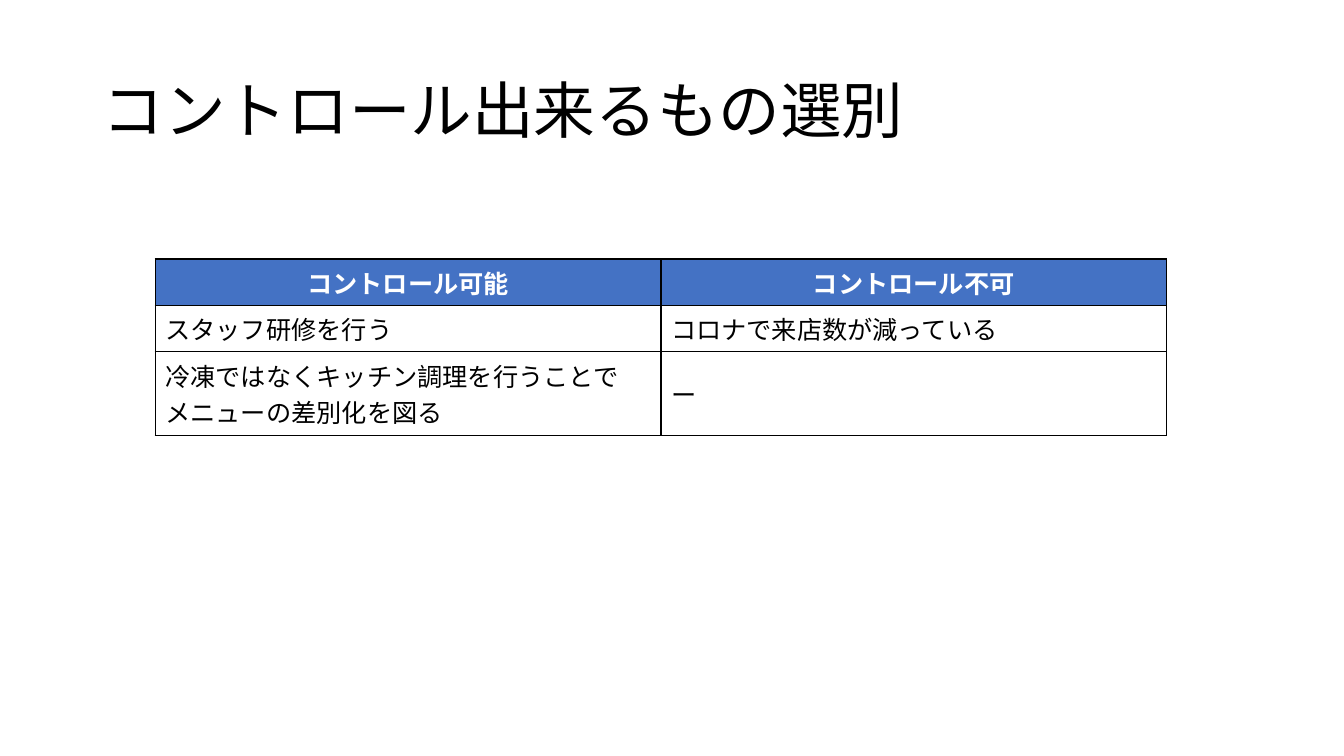
import pptx
import pptx.dml.color
import pptx.enum.text
import pptx.oxml
import pptx.oxml.ns
import pptx.util
from lxml import etree

TITLE = "コントロール出来るもの選別"
ROWS = [
    ("コントロール可能", "コントロール不可"),
    ("スタッフ研修を行う", "コロナで来店数が減っている"),
    ("冷凍ではなくキッチン調理を行うことで\nメニューの差別化を図る", "ー"),
]
FONT = "Noto Sans CJK JP"
BLACK = pptx.dml.color.RGBColor(0x00, 0x00, 0x00)
WHITE = pptx.dml.color.RGBColor(0xFF, 0xFF, 0xFF)
BLUE = pptx.dml.color.RGBColor(0x44, 0x72, 0xC4)
MIDDLE = pptx.enum.text.MSO_ANCHOR.MIDDLE
TOP = pptx.enum.text.MSO_ANCHOR.TOP
CENTER = pptx.enum.text.PP_ALIGN.CENTER
LEFT = pptx.enum.text.PP_ALIGN.LEFT
TABLE_WIDTH = 10.03
ROW_HEIGHTS = (0.46, 0.46, 0.83)
BORDER_WIDTH = pptx.util.Pt(1)
qn = pptx.oxml.ns.qn


def style_paragraph(para, size, color, bold=False, align=LEFT):
    para.alignment = align
    para.font.name = FONT
    para.font.size = pptx.util.Pt(size)
    para.font.bold = bold
    para.font.color.rgb = color
    defaults = para._p.pPr.find(qn("a:defRPr"))
    etree.SubElement(defaults, qn("a:ea"), typeface=FONT)


def add_borders(cell):
    properties = cell._tc.get_or_add_tcPr()
    for side in ("L", "R", "T", "B"):
        line = etree.SubElement(properties, qn("a:ln" + side), w=str(BORDER_WIDTH))
        fill = etree.SubElement(line, qn("a:solidFill"))
        etree.SubElement(fill, qn("a:srgbClr"), val=str(BLACK))


def add_title(page):
    inches = [pptx.util.Inches(length) for length in (0.92, 0.4, 11.5, 1.45)]
    frame = page.shapes.add_textbox(*inches).text_frame
    frame.word_wrap = True
    frame.vertical_anchor = MIDDLE
    frame.text = TITLE
    para = frame.paragraphs[0]
    para.line_spacing = 0.9
    style_paragraph(para, 44, BLACK)


def add_control_table(page):
    table = page.shapes.add_table(
        len(ROWS), len(ROWS[0]),
        pptx.util.Inches(1.54), pptx.util.Inches(2.57),
        pptx.util.Inches(TABLE_WIDTH), pptx.util.Inches(sum(ROW_HEIGHTS)),
    ).table
    table.horz_banding = False
    for row, (texts, height) in enumerate(zip(ROWS, ROW_HEIGHTS)):
        header = row == 0
        table.rows[row].height = pptx.util.Inches(height)
        for column, text in enumerate(texts):
            cell = table.cell(row, column)
            cell.text = text
            cell.vertical_anchor = TOP if header else MIDDLE
            add_borders(cell)
            cell.fill.solid()
            cell.fill.fore_color.rgb = BLUE if header else WHITE
            for para in cell.text_frame.paragraphs:
                style_paragraph(para, 18, WHITE if header else BLACK,
                                header, CENTER if header else LEFT)


def main():
    deck = pptx.Presentation()
    deck.slide_width = pptx.util.Inches(13.33)
    deck.slide_height = pptx.util.Inches(7.5)
    page = deck.slides.add_slide(deck.slide_layouts[6])
    add_title(page)
    add_control_table(page)
    deck.save("out.pptx")


if __name__ == "__main__":
    main()
